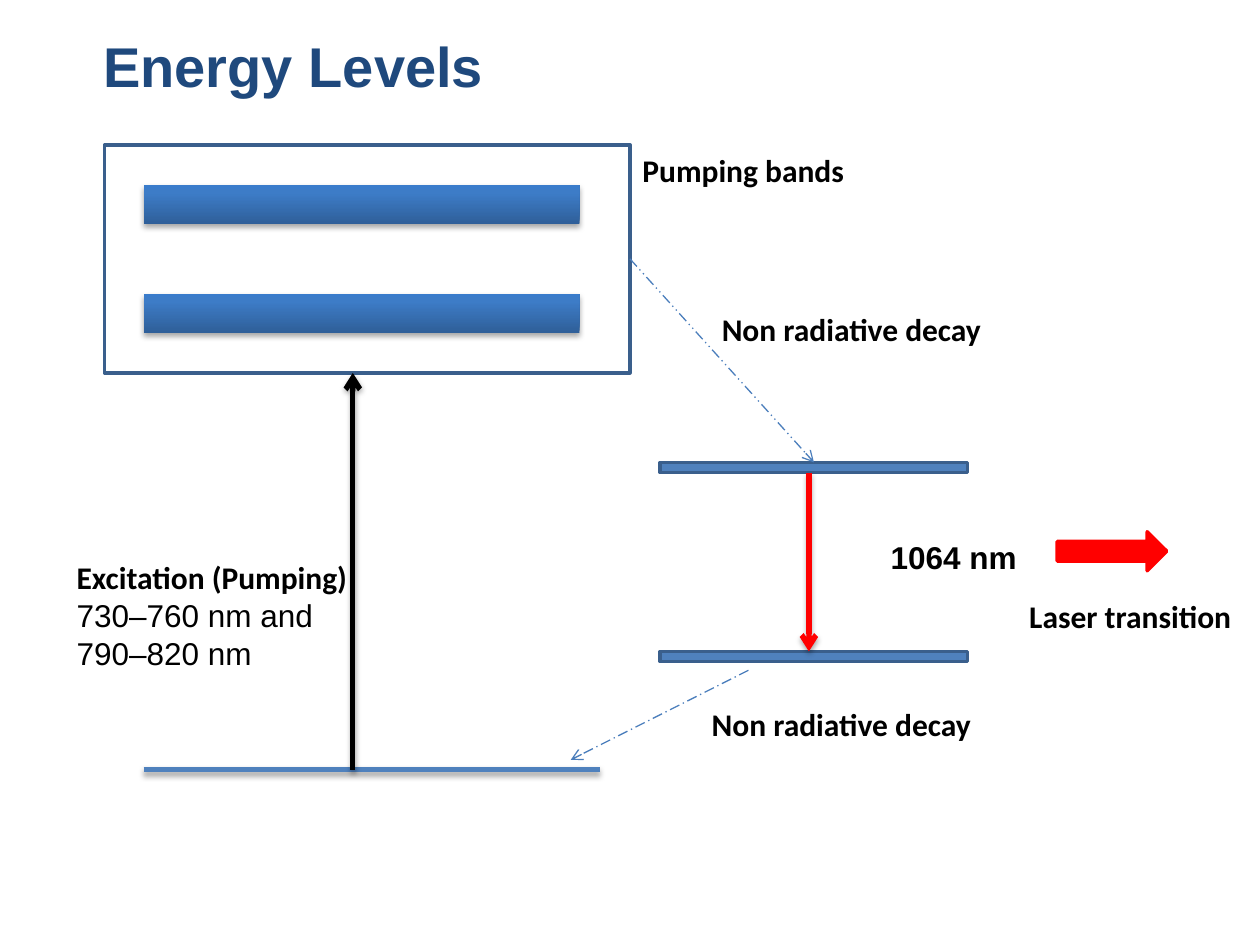
import pptx
import pptx.util
import pptx.dml.color
import pptx.enum.dml
import pptx.enum.shapes
import pptx.enum.text
import pptx.oxml.ns
from lxml import etree

Inches, Pt = pptx.util.Inches, pptx.util.Pt
qn = pptx.oxml.ns.qn
SHAPE = pptx.enum.shapes.MSO_SHAPE
DASH = pptx.enum.dml.MSO_LINE

COLORS = {
    "title": "1F497D", "level": "4F81BD", "outline": "3A5F8C",
    "decay": "4B7EBC", "laser": "FF0000", "text": "000000",
}
BAND_STOPS = [(0, "2F5F99"), (80, "3D7CC7"), (100, "3A7CCB")]
LABEL = {"name": "Calibri", "size": Pt(18), "bold": True}
ARIAL_BOLD = {**LABEL, "name": "Arial"}
ARIAL_PLAIN = {**ARIAL_BOLD, "bold": False}


def rgb(key):
    return pptx.dml.color.RGBColor.from_string(COLORS[key])


def format_run(r, fmt, color="text"):
    for attr, value in fmt.items():
        setattr(r.font, attr, value)
    r.font.color.rgb = rgb(color)


def set_effects(s, shadow):
    """Give the shape a soft shadow below it, or none at all."""
    spPr = s._element.spPr
    effects = etree.SubElement(spPr, qn("a:effectLst"))
    if shadow:
        outer = etree.SubElement(
            effects, qn("a:outerShdw"), blurRad=str(Pt(3.1)), dist=str(Pt(1.8)),
            dir="5400000", rotWithShape="0")
        clr = etree.SubElement(outer, qn("a:srgbClr"), val=COLORS["text"])
        etree.SubElement(clr, qn("a:alpha"), val="35000")


def add_block(slide, box, fill=None, line=None, kind=SHAPE.RECTANGLE, shadow=False):
    sp = slide.shapes.add_shape(kind, *map(Inches, box))
    if fill:
        sp.fill.solid()
        sp.fill.fore_color.rgb = rgb(fill)
    else:
        sp.fill.background()
    if line:
        sp.line.color.rgb = rgb(line)
        sp.line.width = Pt(2)
    else:
        sp.line.fill.background()
    set_effects(sp, shadow)
    return sp


def add_band(slide, top):
    sp = add_block(slide, (1.14, top, 3.46, 0.31), shadow=True)
    sp.fill.gradient()
    sp.fill.gradient_angle = 90
    stops = sp._element.spPr.find(qn("a:gradFill")).find(qn("a:gsLst"))
    for old in list(stops):
        stops.remove(old)
    for pos, color in BAND_STOPS:
        gs = etree.SubElement(stops, qn("a:gs"), pos=str(pos * 1000))
        etree.SubElement(gs, qn("a:srgbClr"), val=color)


def add_line(slide, start, end, color, width=3, dash=None, arrow=True, shadow=True):
    cn = slide.shapes.add_connector(
        pptx.enum.shapes.MSO_CONNECTOR.STRAIGHT, *map(Inches, start + end))
    cn.line.color.rgb = rgb(color)
    cn.line.width = Pt(width)
    if dash:
        cn.line.dash_style = dash
    if arrow:
        ln = cn._element.spPr.find(qn("a:ln"))
        etree.SubElement(ln, qn("a:tailEnd"), type="arrow")
    set_effects(cn, shadow)
    return cn


def add_label(slide, box, lines):
    tf = slide.shapes.add_textbox(*map(Inches, box)).text_frame
    tf.word_wrap = False
    tf.auto_size = pptx.enum.text.MSO_AUTO_SIZE.SHAPE_TO_FIT_TEXT
    for i, (text, fmt) in enumerate(lines):
        p = tf.add_paragraph() if i else tf.paragraphs[0]
        r = p.add_run()
        r.text = text
        format_run(r, fmt)


def add_title(slide, text):
    s = slide.shapes.title
    s.left, s.top, s.width, s.height = map(Inches, (0.72, -0.11, 9, 1.25))
    s.text_frame.vertical_anchor = pptx.enum.text.MSO_ANCHOR.MIDDLE
    p = s.text_frame.paragraphs[0]
    p.alignment = pptx.enum.text.PP_ALIGN.LEFT
    r = p.add_run()
    r.text = text
    format_run(r, {**ARIAL_BOLD, "size": Pt(32)}, "title")


def main():
    prs = pptx.Presentation()
    prs.slide_width, prs.slide_height = Inches(10), Inches(7.5)
    slide = prs.slides.add_slide(prs.slide_layouts[5])
    add_title(slide, "Energy Levels")

    # Ground state, laser levels and pumping bands
    add_line(slide, (1.14, 6.11), (4.76, 6.11), "level", arrow=False)
    upper, _ = [add_block(slide, (5.24, top, 2.44, 0.08), "level", "outline")
                for top in (3.67, 5.17)]
    for top in (1.47, 2.33):
        add_band(slide, top)
    pump_box = add_block(slide, (0.83, 1.15, 4.17, 1.81), line="outline")

    # Transitions
    add_line(slide, (6.42, 3.75), (6.42, 5.17), "laser")
    add_line(slide, (2.8, 6.11), (2.8, 2.96), "text")
    decay = add_line(slide, (5, 2.06), (6.46, 3.67), "decay", 0.75,
                     DASH.DASH_DOT_DOT, shadow=False)
    decay.begin_connect(pump_box, 3)
    decay.end_connect(upper, 0)
    add_line(slide, (5.94, 5.32), (4.53, 6.03), "decay", 0.75,
             DASH.LONG_DASH_DOT, shadow=False)

    # Laser output
    add_block(slide, (8.39, 4.22, 0.87, 0.31), "laser", "laser", SHAPE.RIGHT_ARROW)

    # Labels
    for box, lines in [
        ((6.97, 4.22, 1.21, 0.4), [("1064 nm", ARIAL_BOLD)]),
        ((5, 1.15, 1.81, 0.4), [("Pumping bands", LABEL)]),
        ((0.51, 4.38, 2.37, 1.31), [("Excitation (Pumping)", LABEL),
                                    ("730–760 nm and", ARIAL_PLAIN),
                                    ("790–820 nm", ARIAL_PLAIN)]),
        ((5.63, 2.41, 2.28, 0.4), [("Non radiative decay", LABEL)]),
        ((5.55, 5.55, 2.28, 0.4), [("Non radiative decay", LABEL)]),
        ((8.07, 4.69, 1.82, 0.4), [("Laser transition", LABEL)]),
    ]:
        add_label(slide, box, lines)

    prs.save("out.pptx")


if __name__ == "__main__":
    main()
